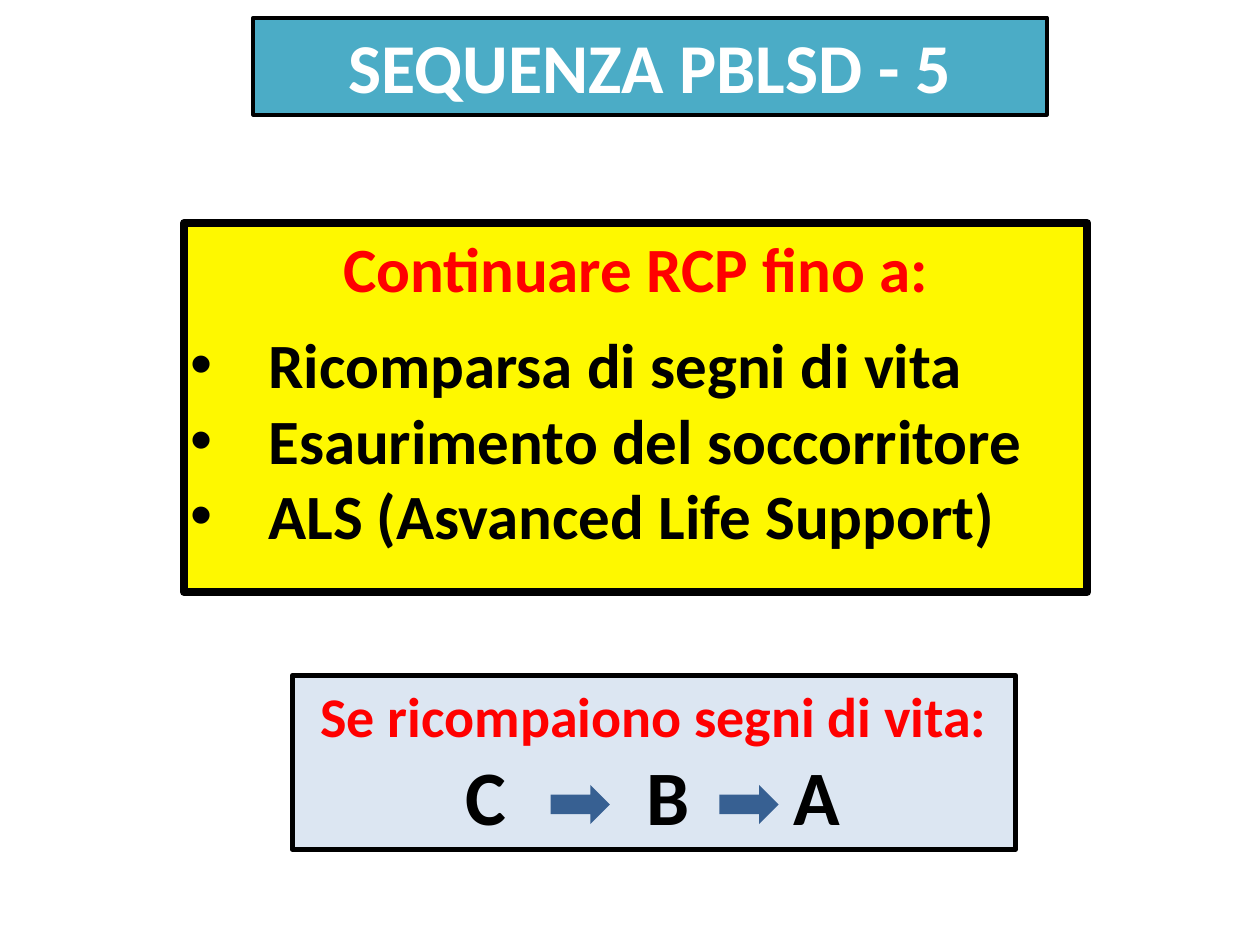
from lxml import etree
from pptx import Presentation
from pptx.dml.color import RGBColor
from pptx.enum.shapes import MSO_SHAPE
from pptx.enum.text import MSO_ANCHOR, MSO_AUTO_SIZE, PP_ALIGN
from pptx.oxml.ns import qn
from pptx.util import Emu, Inches, Pt

RECT, ARROW = MSO_SHAPE.RECTANGLE, MSO_SHAPE.RIGHT_ARROW
CENTER, LEFT = PP_ALIGN.CENTER, PP_ALIGN.LEFT
FONT = "Calibri"
COLORS = {"black": "000000", "white": "FFFFFF", "red": "FF0000", "teal": "4BACC6",
          "yellow": "FEF800", "pale": "DCE6F2", "blue": "376092"}

TITLE = "SEQUENZA PBLSD - 5"
CONTINUE_HEADING = "Continuare RCP fino a:"
STOP_CONDITIONS = ["Ricomparsa di segni di vita", "Esaurimento del soccorritore",
                   "ALS (Asvanced Life Support)"]
RECOVERY_HEADING = "Se ricompaiono segni di vita:"
RECOVERY_STEPS = ["C", "B", "A"]

INSET = 0.05
BULLET_INDENT = 0.62
TITLE_BOX = (2.01, 0.14, 6.3, 0.77)
CONTINUE_BOX = (1.46, 1.77, 7.17, 2.93)
RECOVERY_BOX = (2.32, 5.36, 5.74, 1.38)
STEP_CENTERS = [1.49, 2.93, 4.11]  # from the left edge of the recovery text
ARROW_LEFTS = [4.37, 5.71]
ARROW_TOP, ARROW_SIZE = 6.23, (0.47, 0.31)


def rgb(name):
    return RGBColor.from_string(COLORS[name])


def add_filled(slide, kind, box, fill):
    shape = slide.shapes.add_shape(kind, *map(Inches, box))
    shape.shadow.inherit = False
    shape.fill.solid()
    shape.fill.fore_color.rgb = rgb(fill)
    shape.line.fill.background()
    return shape


def add_panel(slide, box, fill, border):
    """Add a bordered rectangle and return its text frame."""
    panel = add_filled(slide, RECT, box, fill)
    panel.line.color.rgb = rgb("black")
    panel.line.width = Pt(border)
    frame = panel.text_frame
    frame.word_wrap = True
    frame.auto_size = MSO_AUTO_SIZE.SHAPE_TO_FIT_TEXT
    frame.vertical_anchor = MSO_ANCHOR.TOP
    frame.margin_left = frame.margin_right = Inches(INSET)
    frame.margin_top = frame.margin_bottom = Inches(INSET)
    return frame


def write(paragraph, text, size, color, align=CENTER):
    paragraph.alignment = align
    run = paragraph.add_run()
    run.text = text
    run.font.name, run.font.size, run.font.bold = FONT, Pt(size), True
    run.font.color.rgb = rgb(color)


def add_bullet(paragraph):
    props = paragraph._p.get_or_add_pPr()
    props.set("marL", str(Inches(BULLET_INDENT)))
    props.set("indent", str(Emu(-Inches(BULLET_INDENT))))
    etree.SubElement(props, qn("a:buFont"), typeface="Arial")
    etree.SubElement(props, qn("a:buChar"), char="•")


def add_center_tabs(paragraph, positions):
    tabs = etree.SubElement(paragraph._p.get_or_add_pPr(), qn("a:tabLst"))
    for position in positions:
        etree.SubElement(tabs, qn("a:tab"), pos=str(Inches(position)), algn="ctr")


def main():
    deck = Presentation()
    deck.slide_width, deck.slide_height = Inches(10), Inches(7.5)
    slide = deck.slides.add_slide(deck.slide_layouts[6])

    conditions = add_panel(slide, CONTINUE_BOX, "yellow", 4.5)
    write(conditions.paragraphs[0], CONTINUE_HEADING, 36, "red")
    for index, condition in enumerate(STOP_CONDITIONS):
        paragraph = conditions.add_paragraph()
        if index == 0:
            paragraph.space_before = Pt(12)
        add_bullet(paragraph)
        write(paragraph, condition, 36, "black", LEFT)

    recovery = add_panel(slide, RECOVERY_BOX, "pale", 3)
    write(recovery.paragraphs[0], RECOVERY_HEADING, 32, "red")
    steps = recovery.add_paragraph()
    add_center_tabs(steps, STEP_CENTERS)
    for step in RECOVERY_STEPS:
        write(steps, "\t" + step, 44, "black", LEFT)

    title = add_panel(slide, TITLE_BOX, "teal", 2.25)
    write(title.paragraphs[0], TITLE, 40, "white")

    for left in ARROW_LEFTS:
        add_filled(slide, ARROW, (left, ARROW_TOP, *ARROW_SIZE), "blue")

    deck.save("out.pptx")


if __name__ == "__main__":
    main()
